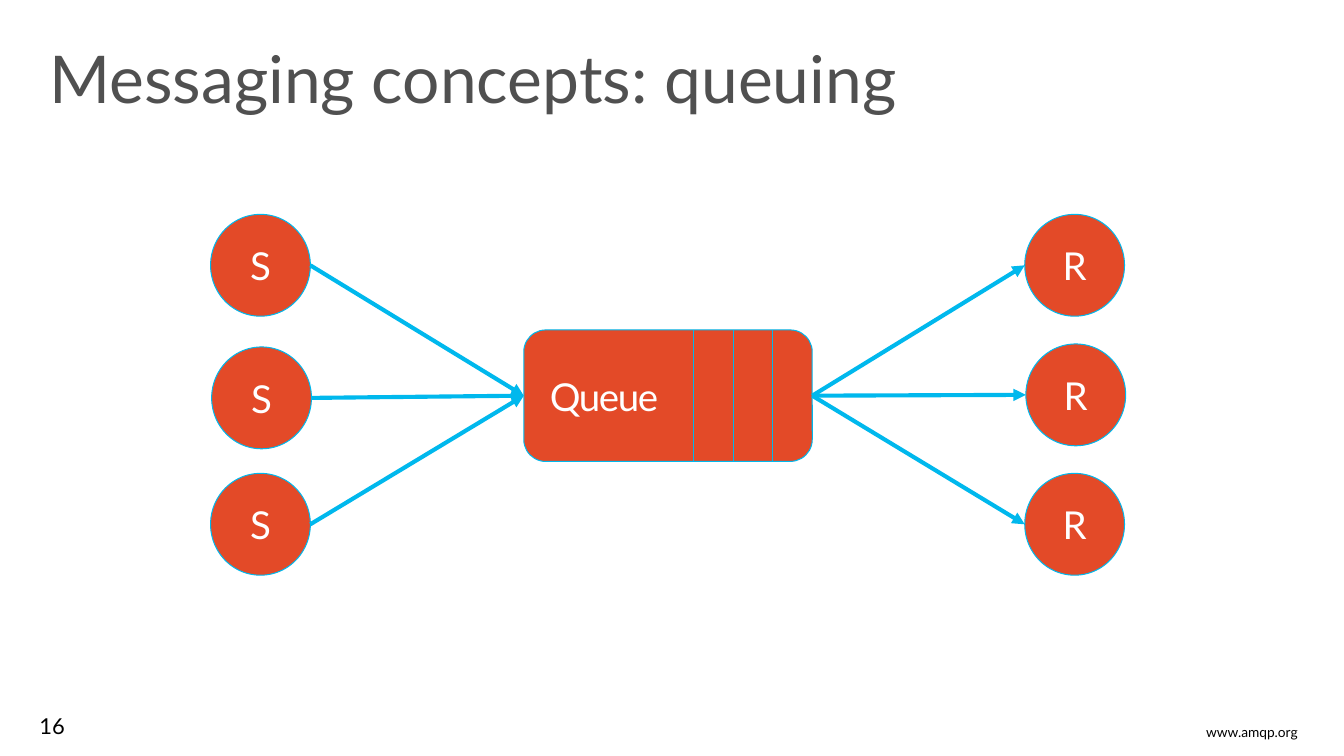
from lxml import etree
from pptx import Presentation
from pptx.dml.color import RGBColor
from pptx.enum.shapes import MSO_CONNECTOR, MSO_SHAPE
from pptx.enum.text import MSO_ANCHOR, PP_ALIGN
from pptx.oxml.ns import qn
from pptx.util import Pt

LINE = MSO_CONNECTOR.STRAIGHT
ROUND, OVAL = MSO_SHAPE.ROUNDED_RECTANGLE, MSO_SHAPE.OVAL
TOP, MIDDLE = MSO_ANCHOR.TOP, MSO_ANCHOR.MIDDLE
LEFT, CENTER, RIGHT = PP_ALIGN.LEFT, PP_ALIGN.CENTER, PP_ALIGN.RIGHT

FONT = "Lato"
ORANGE, BLUE, WHITE = "E34A28", "00B8ED", "FFFFFF"
GREY, BLACK = "505050", "000000"
NODE_W, NODE_H = 72.7, 74.2


def color(target, code):
    target.rgb = RGBColor.from_string(code)


def write(shape, text, size, code, align=LEFT, anchor=TOP,
          inset=(7.2, 3.6, 7.2, 3.6), space=0):
    frame = shape.text_frame
    frame.word_wrap = True
    frame.vertical_anchor = anchor
    (frame.margin_left, frame.margin_top,
     frame.margin_right, frame.margin_bottom) = map(Pt, inset)
    para = frame.paragraphs[0]
    para.alignment = align
    run = para.add_run()
    run.text = text
    run.font.name = FONT
    run.font.size = Pt(size)
    color(run.font.color, code)
    if space:
        run.font._element.set("spc", str(space))


def label(slide, box, text, size, code, **style):
    write(slide.shapes.add_textbox(*map(Pt, box)), text, size, code, **style)


def block(slide, kind, box, text, align, left):
    shape = slide.shapes.add_shape(kind, *map(Pt, box))
    shape.shadow.inherit = False
    shape.fill.solid()
    color(shape.fill.fore_color, ORANGE)
    color(shape.line.color, BLUE)
    shape.line.width = Pt(0.75)
    write(shape, text, 28, WHITE, align, MIDDLE, (left, 2.9, 2.9, 2.9), -100)
    return shape


def link(slide, start, end, width, arrow=False):
    line = slide.shapes.add_connector(LINE, *map(Pt, start + end))
    color(line.line.color, BLUE)
    line.line.width = Pt(width)
    if arrow:
        etree.SubElement(line.line._get_or_add_ln(), qn("a:tailEnd"),
                         type="triangle")
    etree.SubElement(line._element.spPr, qn("a:effectLst"))
    return line


# Queue body with evenly spaced slots
def add_queue(slide, box):
    x, y, w, h = box
    body = block(slide, ROUND, box, "Queue", LEFT, 14.4)
    for slot in range(3):
        pos = x + w - 28.8 * (slot + 1)
        link(slide, (pos, y), (pos, y + h), 0.75)
    return body


# Column of senders, each pointing at the queue
def add_senders(slide, spots, queue, port):
    for x, y in spots:
        block(slide, OVAL, (x, y, NODE_W, NODE_H), "S", CENTER, 2.9)
        edge = (x + NODE_W, y + NODE_H / 2)
        link(slide, edge, port, 3, True).end_connect(queue, 1)


# Column of receivers, each fed by the queue
def add_receivers(slide, spots, queue, port):
    for x, y in spots:
        block(slide, OVAL, (x, y, NODE_W, NODE_H), "R", CENTER, 2.9)
        edge = (x, y + NODE_H / 2)
        link(slide, port, edge, 3, True).begin_connect(queue, 3)


# Page number and web address
def add_footer(slide, box):
    x, y, w, h = box
    label(slide, (x, y, 54, h), "16", 16, BLACK)
    label(slide, (x + w - 121.7, y + 8.6, 121.7, 20), "www.amqp.org", 10,
          BLACK, align=RIGHT, inset=(7.9, 3.6, 7.9, 3.6))


def main():
    deck = Presentation()
    deck.slide_width, deck.slide_height = Pt(979.2), Pt(550.8)
    slide = deck.slides.add_slide(deck.slide_layouts[6])

    add_footer(slide, (21.6, 515.5, 931.7, 26.6))
    label(slide, (21.6, 23.8, 936, 72), "Messaging concepts: queuing", 48,
          GREY, inset=(14.4, 3.6, 14.4, 3.6))

    x, y, w, h = box = (381.6, 240.4, 210.2, 95.8)
    queue = add_queue(slide, box)
    mid = y + h / 2
    add_senders(slide, [(153.4, 156.2), (154.2, 252.8), (153.4, 344.9)],
                queue, (x, mid))
    add_receivers(slide, [(746.6, 156.2), (747.4, 250.6), (746.6, 344.9)],
                  queue, (x + w, mid))
    deck.save("out.pptx")


if __name__ == "__main__":
    main()
